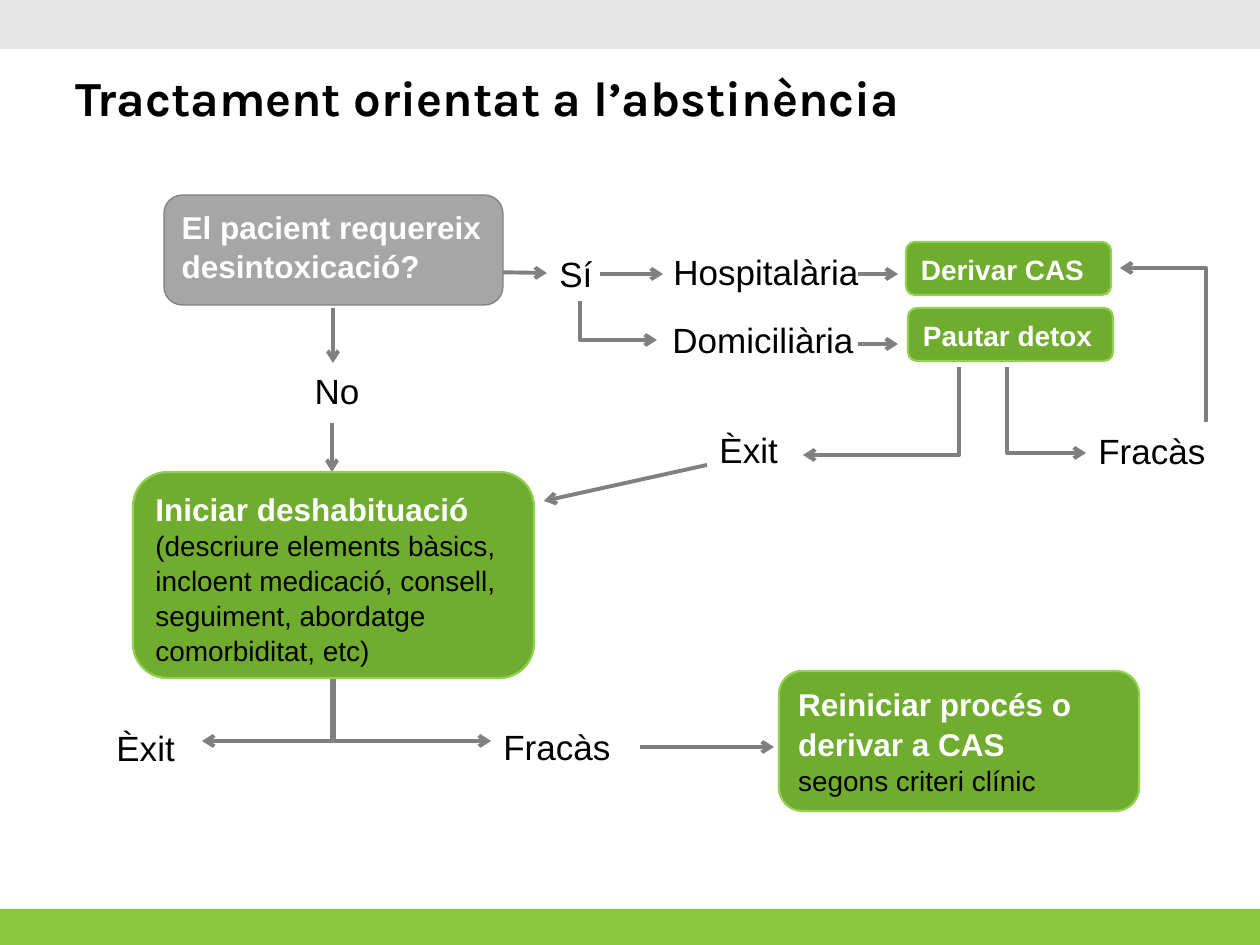
from dataclasses import dataclass
from typing import NamedTuple

from lxml.etree import SubElement
from pptx import Presentation
from pptx.dml.color import RGBColor
from pptx.enum.shapes import MSO_CONNECTOR as Link, MSO_SHAPE as Kind
from pptx.enum.text import MSO_ANCHOR as Anchor, PP_ALIGN as Align
from pptx.oxml.ns import qn
from pptx.util import Emu, Pt


@dataclass(frozen=True)
class Theme:
    """Colours, fonts and sizes of the slide."""
    black: str = "000000"
    white: str = "FFFFFF"
    band: str = "E6E6E6"
    foot: str = "8CC63E"
    grey: str = "A6A6A6"
    line: str = "808080"
    green: str = "70AC2E"
    rim: str = "92D050"
    head: str = "Karla"
    body: str = "Arial"
    title: int = 28
    label: int = 20
    large: int = 18
    small: int = 16


class Label(NamedTuple):
    text: str
    x: int
    y: int
    w: int
    align: Align = Align.LEFT


class Arrow(NamedTuple):
    x1: float
    y1: float
    x2: float
    y2: float


class Note(NamedTuple):
    text: str
    size: int
    color: str
    bold: bool


class Box(NamedTuple):
    x: int
    y: int
    w: int
    h: int
    fill: str
    rim: str
    rim_pt: float
    notes: list[Note]


T = Theme()


def strong(text: str, size: int = T.large) -> Note:
    """Make a bold white paragraph."""
    return Note(text, size, T.white, True)


def plain(text: str) -> Note:
    """Make a regular black paragraph."""
    return Note(text, T.small, T.black, False)


def green(x: int, y: int, w: int, h: int, *notes: Note) -> Box:
    """Make a green action box."""
    return Box(x, y, w, h, T.green, T.rim, 1.25, list(notes))


LABELS = [
    Label("Sí", 547, 246, 74),
    Label("No", 282, 363, 110, Align.CENTER),
    Label("Hospitalària", 661, 244, 227),
    Label("Domiciliària", 660, 312, 208),
    Label("Fracàs", 1086, 423, 149),
    Label("Èxit", 707, 422, 92),
    Label("Fracàs", 491, 719, 149),
    Label("Èxit", 104, 720, 129),
]
STRAIGHT = [
    Arrow(483, 272, 547, 273),
    Arrow(600, 274, 663, 274),
    Arrow(858, 274, 898, 274),
    Arrow(858, 344, 898, 344),
    Arrow(707, 465, 544, 501),
    Arrow(333, 308, 333, 363),
    Arrow(332, 423, 332, 472),
    Arrow(640, 747, 774, 747),
]
BENT = [
    Arrow(580, 301, 657, 340),
    Arrow(1007, 367, 1086, 453),
    Arrow(959, 367, 803, 455),
    Arrow(334, 633, 491, 741),
    Arrow(332, 633, 202, 741),
    Arrow(1206, 422, 1120, 268),
]
BOXES = [
    Box(164, 195, 339, 110, T.grey, T.line, 0.75,
        [strong("El pacient requereix desintoxicació?")]),
    green(906, 242, 205, 53, strong("Derivar CAS", T.small)),
    green(908, 308, 205, 53, strong("Pautar detox", T.small)),
    green(133, 472, 401, 206, strong("Iniciar deshabituació"),
          plain("(descriure elements bàsics, incloent medicació, consell, "
                "seguiment, abordatge comorbiditat, etc)")),
    green(779, 671, 360, 140, strong("Reiniciar procés o derivar a CAS"),
          plain("segons criteri clínic")),
]


def px(n: float) -> Emu:
    """Turn px into EMU at 126 px to the inch."""
    return Emu(round(n * 914400 / 126))


def rgb(code: str) -> RGBColor:
    """Read a hex colour."""
    return RGBColor.from_string(code)


def style(para, font: str, size: int, color: str, bold: bool = False) -> None:
    """Set the font of a paragraph."""
    para.font.name, para.font.size, para.font.bold = font, Pt(size), bold
    para.font.color.rgb = rgb(color)


def draw_title(slide, text: str) -> None:
    """Place and format the title."""
    title = slide.shapes.title
    title.left, title.top, title.width, title.height = map(px, (63, 18, 1134, 157))
    title.text_frame.text = text
    title.text_frame.vertical_anchor = Anchor.MIDDLE
    para = title.text_frame.paragraphs[0]
    para.alignment = Align.LEFT
    style(para, T.head, T.title, T.black, True)


def draw_shape(slide, kind: Kind, x: int, y: int, w: int, h: int, fill: str):
    """Draw a filled shape without line or shadow."""
    shape = slide.shapes.add_shape(kind, *map(px, (x, y, w, h)))
    shape.shadow.inherit = False
    shape.fill.solid()
    shape.fill.fore_color.rgb = rgb(fill)
    shape.line.fill.background()
    return shape


def draw_label(slide, label: Label) -> None:
    """Draw a one-line text."""
    area = slide.shapes.add_textbox(*map(px, (label.x, label.y, label.w, 55)))
    area.text_frame.word_wrap = True
    para = area.text_frame.paragraphs[0]
    para.text, para.alignment = label.text, label.align
    style(para, T.body, T.label, T.black)


def draw_link(slide, kind: Link, ends: Arrow):
    """Draw a grey connector with an arrowhead at its end."""
    link = slide.shapes.add_connector(kind, *map(px, ends))
    link.line.color.rgb = rgb(T.line)
    link.line.width = Pt(2.25)
    props = link._element.spPr
    SubElement(props.find(qn("a:ln")), qn("a:tailEnd"), type="arrow")
    SubElement(props, qn("a:effectLst"))
    return link


def draw_bent(slide, bend: Arrow) -> None:
    """Draw a one-corner arrow that runs upright first, as a turned elbow."""
    dx, dy = bend.x2 - bend.x1, bend.y2 - bend.y1
    mx, my = (bend.x1 + bend.x2) / 2, (bend.y1 + bend.y2) / 2
    u = abs(dy) / 2 * (-1 if dx > 0 else 1)
    v = abs(dx) / 2 * (-1 if dy < 0 else 1)
    link = draw_link(slide, Link.ELBOW, Arrow(mx - u, my - v, mx + u, my + v))
    props = link._element.spPr
    turn = 90 if dx < 0 < dy else 270
    props.find(qn("a:xfrm")).set("rot", str(turn * 60000))
    props.find(qn("a:prstGeom")).set("prst", "bentConnector2")


def draw_box(slide, box: Box) -> None:
    """Draw a rounded box with its paragraphs."""
    shape = draw_shape(slide, Kind.ROUNDED_RECTANGLE, *box[:5])
    shape.line.color.rgb = rgb(box.rim)
    shape.line.width = Pt(box.rim_pt)
    frame = shape.text_frame
    frame.word_wrap, frame.vertical_anchor = True, Anchor.TOP
    for i, note in enumerate(box.notes):
        para = frame.add_paragraph() if i else frame.paragraphs[0]
        para.text, para.alignment, para.line_spacing = note.text, Align.LEFT, 1.04
        style(para, T.body, note.size, note.color, note.bold)


def main() -> None:
    """Build the slide and save it."""
    deck = Presentation()
    deck.slide_width, deck.slide_height = px(1260), px(945)
    slide = deck.slides.add_slide(deck.slide_layouts[5])
    draw_shape(slide, Kind.RECTANGLE, 0, 909, 1260, 36, T.foot)
    draw_shape(slide, Kind.RECTANGLE, 0, 0, 1260, 49, T.band)
    draw_title(slide, "Tractament orientat a l’abstinència")
    for label in LABELS:
        draw_label(slide, label)
    for ends in STRAIGHT:
        draw_link(slide, Link.STRAIGHT, ends)
    for bend in BENT:
        draw_bent(slide, bend)
    for box in BOXES:
        draw_box(slide, box)
    deck.save("out.pptx")


if __name__ == "__main__":
    main()
